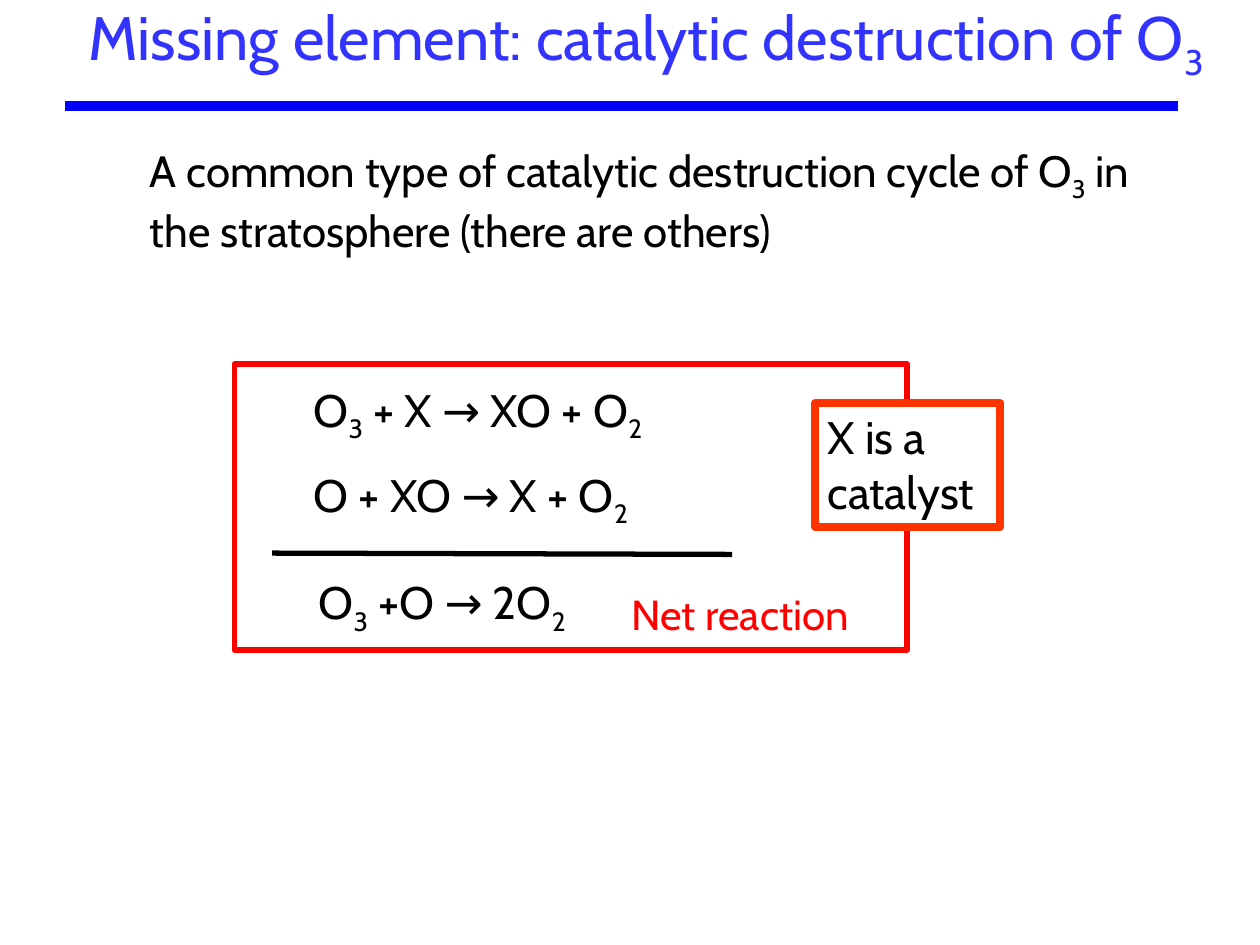
"""Build a slide on the catalytic destruction of ozone."""
from lxml.etree import SubElement
from pptx import Presentation
from pptx.dml.color import RGBColor
from pptx.enum.shapes import MSO_CONNECTOR, MSO_SHAPE
from pptx.enum.text import MSO_ANCHOR, MSO_AUTO_SIZE, PP_ALIGN
from pptx.oxml.ns import qn
from pptx.util import Inches, Pt

FONT = "Cabin"
BLACK = RGBColor(0x00, 0x00, 0x00)
WHITE = RGBColor(0xFF, 0xFF, 0xFF)
RED = RGBColor(0xFF, 0x00, 0x00)
ORANGE = RGBColor(0xFF, 0x33, 0x00)
BLUE = RGBColor(0x00, 0x00, 0xFF)
TITLE_BLUE = RGBColor(0x33, 0x33, 0xFF)


def place(sp, left, top, width, height):
    """Move and size a shape, in inches."""
    sp.left, sp.top = Inches(left), Inches(top)
    sp.width, sp.height = Inches(width), Inches(height)


def write(sp, lines, size, color=BLACK, align=PP_ALIGN.LEFT,
          anchor=MSO_ANCHOR.TOP, wrap=True, gap=0):
    """Fill a shape with lines in which _ marks off subscripts."""
    tf = sp.text_frame
    tf.word_wrap = wrap
    tf.auto_size = MSO_AUTO_SIZE.NONE
    tf.vertical_anchor = anchor
    for i, line in enumerate(lines):
        p = tf.add_paragraph() if i else tf.paragraphs[0]
        p.alignment = align
        p.space_before = Pt(gap if i else 0)
        p.font.name, p.font.size = FONT, Pt(size)
        p.font.color.rgb = color
        for j, part in enumerate(line.split("_")):
            if part:
                r = p.add_run()
                r.text = part
                if j % 2:
                    r._r.get_or_add_rPr().set("baseline", "-25000")


def clear_bullet(p):
    """Remove the bullet and hanging indent of a paragraph."""
    pPr = p._p.get_or_add_pPr()
    pPr.set("marL", "0")
    pPr.set("indent", "0")
    pPr.insert_element_before(pPr.makeelement(qn("a:buNone")), "a:tabLst", "a:defRPr")


def add_text(s, box, lines, size, **style):
    """Add a text box."""
    sp = s.shapes.add_textbox(*map(Inches, box))
    write(sp, lines, size, **style)
    return sp


def add_frame(s, box, color, width, fill=None):
    """Add an outlined rectangle."""
    sp = s.shapes.add_shape(MSO_SHAPE.RECTANGLE, *map(Inches, box))
    sp.shadow.inherit = False
    if fill is None:
        sp.fill.background()
    else:
        sp.fill.solid()
        sp.fill.fore_color.rgb = fill
    sp.line.color.rgb = color
    sp.line.width = Pt(width)
    return sp


def add_line(s, start, end, color, width):
    """Add a straight line without shadow."""
    c = s.shapes.add_connector(MSO_CONNECTOR.STRAIGHT, *map(Inches, start + end))
    c.line.color.rgb = color
    c.line.width = Pt(width)
    SubElement(c._element.spPr, qn("a:effectLst"))


def main():
    """Build and save the slide."""
    prs = Presentation()
    prs.slide_width, prs.slide_height = Inches(10), Inches(7.5)
    s = prs.slides.add_slide(prs.slide_layouts[1])

    title, body = s.placeholders
    place(title, 0.26, -0.01, 9.74, 0.67)
    write(title, ["Missing element: catalytic destruction of O_3_"], 35,
          color=TITLE_BLUE, align=PP_ALIGN.CENTER, anchor=MSO_ANCHOR.MIDDLE)
    add_line(s, (0.52, 0.84), (9.35, 0.84), BLUE, 6)
    place(body, 1.09, 1.09, 8.26, 0.94)
    write(body, ["A common type of catalytic destruction cycle of O_3_ in "
                 "the stratosphere (there are others)"], 25)
    clear_bullet(body.text_frame.paragraphs[0])

    steps = add_text(s, (1.39, 2.98, 5.67, 1.19),
                     ["O_3_ + X → XO + O_2_", "O + XO → X + O_2_"], 26, gap=13)
    steps.text_frame.margin_left = Inches(1.1)
    add_frame(s, (1.86, 2.89, 5.34, 2.27), RED, 3)
    add_line(s, (2.16, 4.39), (5.81, 4.4), BLACK, 3)
    add_text(s, (4.69, 4.62, 2.37, 0.5), ["Net reaction"], 24,
             color=RED, align=PP_ALIGN.CENTER)
    add_text(s, (2.43, 4.51, 2.41, 0.54), ["O_3_ +O → 2O_2_"], 26, wrap=False)
    catalyst = add_frame(s, (6.47, 3.2, 1.47, 0.98), ORANGE, 4.5, fill=WHITE)
    write(catalyst, ["X is a catalyst"], 26)

    prs.save("out.pptx")


if __name__ == "__main__":
    main()
